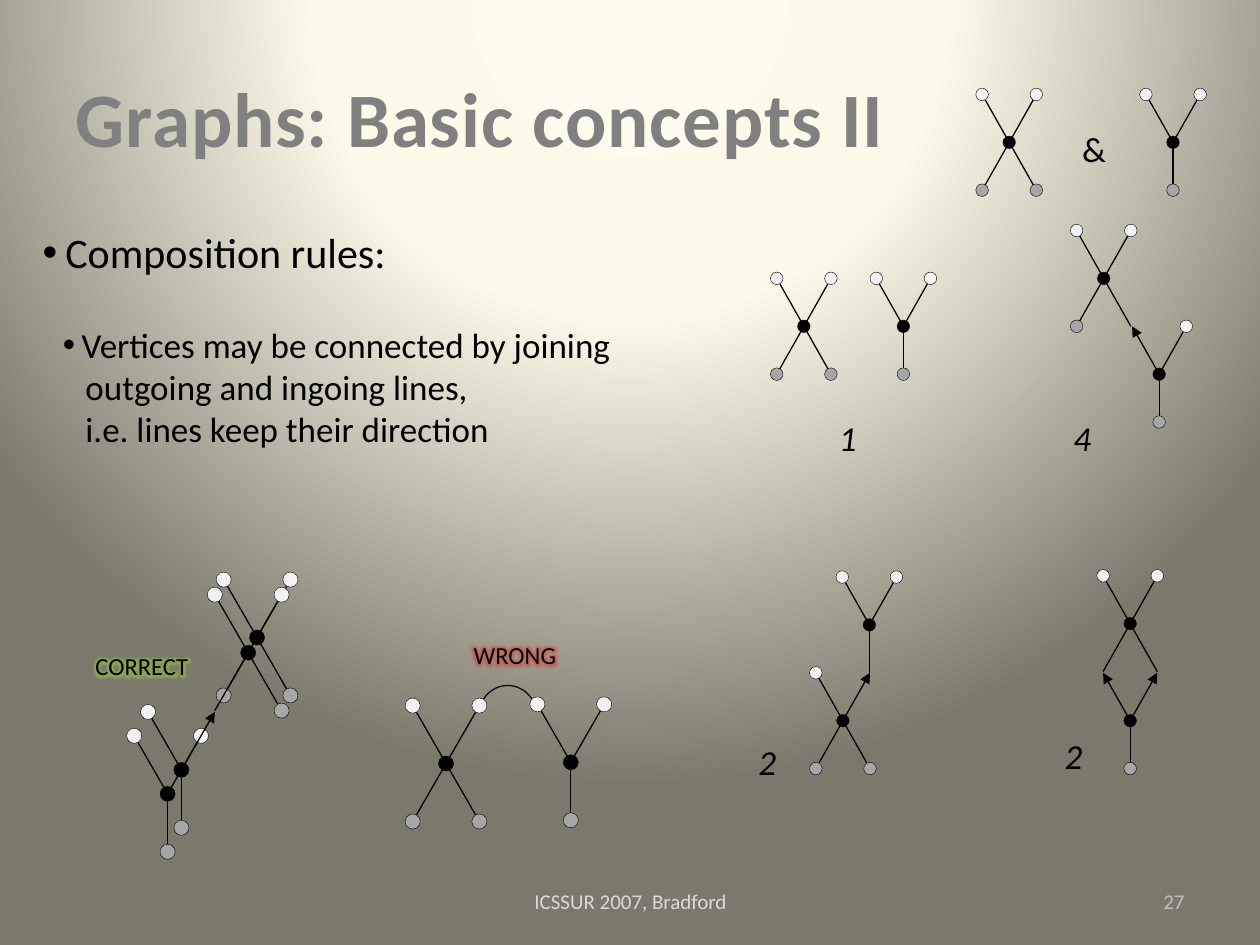
from dataclasses import dataclass

import pptx
import pptx.dml.color
import pptx.enum.shapes
import pptx.enum.text
import pptx.oxml
import pptx.oxml.ns
import pptx.util
from pptx.util import Inches

ALIGN = pptx.enum.text.PP_ALIGN
SHAPE = pptx.enum.shapes.MSO_SHAPE
NS = pptx.oxml.ns.nsdecls("a")


@dataclass(frozen=True)
class Theme:
    font: str = "Calibri"
    black: str = "000000"
    edge: str = "0D0D0D"
    light: str = "F2F2F2"
    grey: str = "A6A6A6"
    title: str = "808080"
    foot: str = "D9D9D9"
    page: str = "BFBFBF"
    green: str = "9BBB59"
    red: str = "C0504D"
    stops: tuple = ((0, "FEFCEE"), (40, "FDFAEA"), (100, "7B796B"))
    title_pt: float = 44
    head_pt: float = 24
    body_pt: float = 20
    tag_pt: float = 14
    foot_pt: float = 12
    line_pt: float = 0.75
    edge_pt: float = 0.25


THEME = Theme()


@dataclass(frozen=True)
class Scale:
    dx: float
    dy: float
    dot: float


SMALL = Scale(0.215, 0.38, 0.1)
LARGE = Scale(0.265, 0.46, 0.12)
SIDES = {"nw": (-1, -1), "ne": (1, -1), "sw": (-1, 1), "se": (1, 1), "s": (0, 1)}
X = ("nw", "ne", "sw", "se")
Y = ("nw", "ne", "s")


@dataclass(frozen=True)
class Node:
    """A vertex with its arms; bare arms end without a dot, heads in an arrow."""
    x: float
    y: float
    arms: tuple
    scale: Scale = SMALL
    bare: tuple = ()
    heads: tuple = ()


@dataclass(frozen=True)
class Label:
    box: tuple
    lines: tuple
    size: float
    color: str = THEME.black
    align: ALIGN = ALIGN.LEFT
    slant: bool = False
    glow: str = ""
    dents: tuple = ()
    bullet: bool = False


NODES = (
    Node(8.01, 1.13, X), Node(9.31, 1.13, Y),
    Node(6.38, 2.59, X), Node(7.17, 2.59, Y),
    Node(8.76, 2.21, X, bare=("se",)), Node(9.2, 2.97, Y, heads=("nw",)),
    Node(6.69, 5.72, X, heads=("ne",)), Node(6.9, 4.96, Y, bare=("s",)),
    Node(8.97, 4.95, X, bare=("sw", "se")),
    Node(8.97, 5.72, Y, heads=("nw", "ne")),
    Node(3.54, 6.06, X, LARGE), Node(4.53, 6.05, Y, LARGE),
    Node(2.04, 5.06, X, LARGE), Node(1.33, 6.3, Y, LARGE),
    Node(1.97, 5.18, X, LARGE, bare=("sw",)),
    Node(1.44, 6.11, Y, LARGE, heads=("ne",)),
)

LABELS = (
    Label((0.24, 1.66, 4.72, 0.68), ("Composition rules:",), THEME.head_pt,
          dents=(0.18,), bullet=True),
    Label((0.4, 2.37, 4.9, 1.39),
          ("Vertices may be connected by joining",
           "outgoing and ingoing lines,",
           "i.e. lines keep their direction"),
          THEME.body_pt, dents=(0.15, 0.18, 0.18), bullet=True),
    Label((3.66, 4.95, 1.05, 0.49), ("WRONG",), THEME.tag_pt, glow=THEME.red),
    Label((0.66, 5.04, 0.94, 0.49), ("CORRECT",), THEME.tag_pt, glow=THEME.green),
    Label((8.49, 0.96, 0.38, 0.43), ("&",), THEME.body_pt),
    *(Label((x, y, 0.39, 0.57), (text,), THEME.body_pt, slant=True)
      for x, y, text in ((6.56, 3.19, "1"), (8.42, 3.19, "4"),
                         (5.92, 5.76, "2"), (8.35, 5.71, "2"))),
    Label((3.42, 6.95, 3.17, 0.4), ("ICSSUR 2007, Bradford",), THEME.foot_pt,
          THEME.foot, ALIGN.CENTER),
    Label((7.17, 6.95, 2.33, 0.4), ("27",), THEME.foot_pt, THEME.page, ALIGN.RIGHT),
)


def rgb(code: str) -> pptx.dml.color.RGBColor:
    return pptx.dml.color.RGBColor.from_string(code)


def paint_back(slide) -> None:
    stops = "".join(f'<a:gs pos="{pos * 1000}"><a:srgbClr val="{code}"/></a:gs>'
                    for pos, code in THEME.stops)
    slide.background.fill.solid()
    fill = slide.background._cSld.bg.bgPr.find(pptx.oxml.ns.qn("a:solidFill"))
    fill.getparent().replace(fill, pptx.oxml.parse_xml(
        f'<a:gradFill {NS} rotWithShape="1"><a:gsLst>{stops}</a:gsLst>'
        '<a:path path="circle"><a:fillToRect l="50000" t="-80000" r="50000" '
        'b="180000"/></a:path></a:gradFill>'))


def add_run(para, text: str, size: float, color: str):
    run = para.add_run()
    run.text = text
    run.font.name = THEME.font
    run.font.size = pptx.util.Pt(size)
    run.font.color.rgb = rgb(color)
    return run


def add_title(slide, text: str) -> None:
    title = slide.shapes.title
    title.left, title.top, title.width, title.height = map(Inches, (0.5, 0.3, 6.88, 1.25))
    frame = title.text_frame
    frame.auto_size = pptx.enum.text.MSO_AUTO_SIZE.NONE
    frame.vertical_anchor = pptx.enum.text.MSO_ANCHOR.MIDDLE
    para = frame.paragraphs[0]
    para.alignment = ALIGN.LEFT
    run = add_run(para, text, THEME.title_pt, THEME.title)
    run.font.bold = True
    run.font._element.set("spc", "50")


def add_label(slide, label: Label) -> None:
    frame = slide.shapes.add_textbox(*map(Inches, label.box)).text_frame
    frame.word_wrap = True
    frame.vertical_anchor = pptx.enum.text.MSO_ANCHOR.MIDDLE
    for i, text in enumerate(label.lines):
        para = frame.add_paragraph() if i else frame.paragraphs[0]
        para.alignment = label.align
        run = add_run(para, text, label.size, label.color)
        run.font.italic = label.slant
        if label.dents:
            props = para._p.get_or_add_pPr()
            props.set("marL", str(Inches(label.dents[i])))
            if label.bullet and i == 0:
                props.set("indent", str(-Inches(label.dents[i])))
                props.append(pptx.oxml.parse_xml(f'<a:buFont {NS} typeface="Arial"/>'))
                props.append(pptx.oxml.parse_xml(f'<a:buChar {NS} char="•"/>'))
        if label.glow:
            fill = run.font._element.find(pptx.oxml.ns.qn("a:solidFill"))
            fill.addnext(pptx.oxml.parse_xml(
                f'<a:effectLst {NS}><a:glow rad="101600"><a:srgbClr val="{label.glow}">'
                '<a:satMod val="175000"/><a:alpha val="40000"/>'
                '</a:srgbClr></a:glow></a:effectLst>'))


def add_line(slide, start: tuple, end: tuple, head: bool) -> None:
    line = slide.shapes.add_connector(
        pptx.enum.shapes.MSO_CONNECTOR.STRAIGHT, *map(Inches, start + end))
    line.line.color.rgb = rgb(THEME.black)
    line.line.width = pptx.util.Pt(THEME.line_pt)
    if head:
        line.line._get_or_add_ln().append(
            pptx.oxml.parse_xml(f'<a:tailEnd {NS} type="triangle"/>'))
    line._element.spPr.append(pptx.oxml.parse_xml(f"<a:effectLst {NS}/>"))


def add_dot(slide, spot: tuple, size: float, color: str) -> None:
    x, y = spot
    dot = slide.shapes.add_shape(
        SHAPE.OVAL, *map(Inches, (x - size / 2, y - size / 2, size, size)))
    dot.shadow.inherit = False
    dot.fill.solid()
    dot.fill.fore_color.rgb = rgb(color)
    dot.line.color.rgb = rgb(THEME.edge)
    dot.line.width = pptx.util.Pt(THEME.edge_pt)


def add_node(slide, node: Node) -> None:
    scale, hub = node.scale, (node.x, node.y)
    ends = {arm: (node.x + SIDES[arm][0] * scale.dx, node.y + SIDES[arm][1] * scale.dy)
            for arm in node.arms}
    for arm, end in ends.items():
        add_line(slide, hub, end, arm in node.heads)
    for arm, end in ends.items():
        if arm not in node.bare + node.heads:
            add_dot(slide, end, scale.dot, THEME.light if arm[0] == "n" else THEME.grey)
    add_dot(slide, hub, scale.dot, THEME.black)


def add_arc(slide) -> None:
    """Bridge the two upper dots of the wrong join."""
    arc = slide.shapes.add_shape(SHAPE.ARC, *map(Inches, (3.8, 5.44, 0.46, 0.48)))
    arc.adjustments[0], arc.adjustments[1] = 126.42, 195.17
    arc.shadow.inherit = False
    arc.fill.background()
    arc.line.color.rgb = rgb(THEME.edge)
    arc.line.width = pptx.util.Pt(THEME.line_pt)


def main() -> None:
    deck = pptx.Presentation()
    deck.slide_width, deck.slide_height = Inches(10), Inches(7.5)
    slide = deck.slides.add_slide(deck.slide_layouts[5])
    paint_back(slide)
    add_title(slide, "Graphs: Basic concepts II")
    add_arc(slide)
    for node in NODES:
        add_node(slide, node)
    for label in LABELS:
        add_label(slide, label)
    deck.save("out.pptx")


if __name__ == "__main__":
    main()
